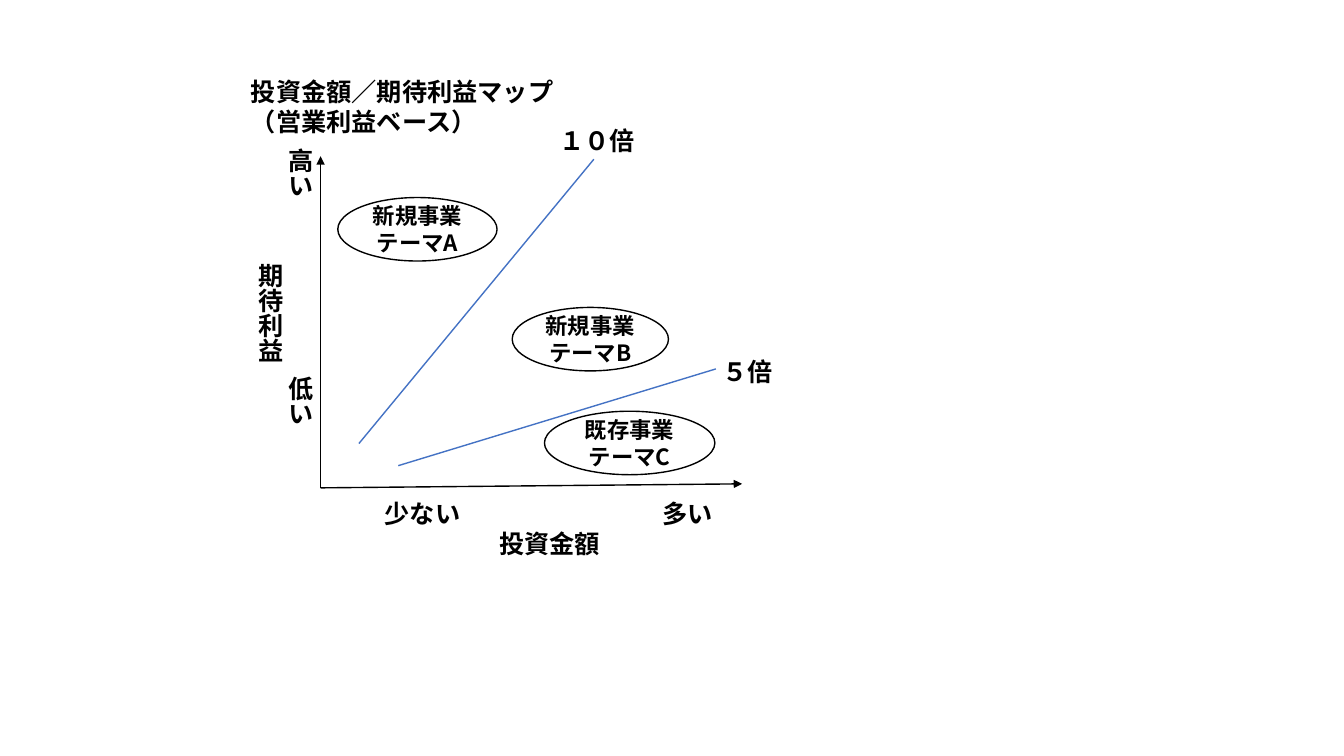
from pptx import Presentation
from pptx import util as u
from pptx.dml.color import RGBColor
from pptx.enum import shapes, text
from pptx.oxml import parse_xml
from pptx.oxml.ns import nsdecls, qn
from lxml import etree

THEME = {
    "font": "Noto Sans CJK JP",
    "ink": RGBColor.from_string("000000"),
    "paper": RGBColor.from_string("FFFFFF"),
    "ratio": RGBColor.from_string("4472C4"),
    "label": u.Pt(18),
    "theme": u.Pt(16),
    "rule": u.Pt(1),
}
CELL = 0.1
LEFT, MID = text.PP_ALIGN.LEFT, text.PP_ALIGN.CENTER
BARE = {"margin_left": 0, "margin_right": 0, "margin_top": 0, "margin_bottom": 0}


def grid(*cells):
    return [u.Inches(cell * CELL) for cell in cells]


def apply(item, values):
    for name, value in values.items():
        setattr(item, name, value)


def write(frame, lines, size, align):
    for index, line in enumerate(lines):
        para = frame.add_paragraph() if index else frame.paragraphs[0]
        para.alignment = align
        run = para.add_run()
        run.text = line
        apply(run.font, {"name": THEME["font"], "size": THEME[size], "bold": True})
        run.font.color.rgb = THEME["ink"]
        etree.SubElement(run.font._element, qn("a:ea")).set("typeface", THEME["font"])


def label(slide, box, *lines, align=LEFT):
    frame = slide.shapes.add_textbox(*grid(*box)).text_frame
    frame.word_wrap = False
    write(frame, lines, "label", align)
    return frame


def mark(slide, x, y, words, upright=False):
    wide, high = (4, 12) if upright else (12, 4)
    frame = label(slide, (x - wide / 2, y - high / 2, wide, high), words, align=MID)
    apply(frame, {**BARE, "vertical_anchor": text.MSO_ANCHOR.MIDDLE})
    if upright:
        frame._txBody.bodyPr.set("vert", "eaVert")


def line(slide, start, end, color, arrow=False):
    link = slide.shapes.add_connector(
        shapes.MSO_CONNECTOR.STRAIGHT, *grid(*start, *end))
    link.line.width = THEME["rule"]
    link.line.color.rgb = THEME[color]
    if arrow:
        link.line._get_or_add_ln().append(
            parse_xml(f'<a:tailEnd {nsdecls("a")} type="triangle"/>'))
    etree.SubElement(link._element.spPr, qn("a:effectLst"))


def oval(slide, x, y, wide, words):
    shape = slide.shapes.add_shape(
        shapes.MSO_SHAPE.OVAL, *grid(x, y, wide, 6.3))
    shape.shadow.inherit = False
    shape.fill.solid()
    shape.fill.fore_color.rgb = THEME["paper"]
    shape.line.color.rgb = THEME["ink"]
    shape.line.width = THEME["rule"]
    frame = shape.text_frame
    apply(frame, {"word_wrap": True, "vertical_anchor": text.MSO_ANCHOR.MIDDLE})
    write(frame, [words], "theme", MID)


def main():
    deck = Presentation()
    apply(deck, {"slide_width": u.Inches(13.33), "slide_height": u.Inches(7.5)})
    slide = deck.slides.add_slide(deck.slide_layouts[6])

    origin = (31.8, 48.4)
    for end in ((73.6, 48), (31.8, 15.5)):
        line(slide, origin, end, "ink", arrow=True)
    for x, y, words in ((41.9, 50.9, "少ない"), (68.2, 50.9, "多い"),
                        (54.5, 53.9, "投資金額")):
        mark(slide, x, y, words)
    for x, y, words in ((29.8, 20.7, "高い"), (29.8, 43.3, "低い"),
                        (26.8, 32.1, "期待利益")):
        mark(slide, x, y, words, upright=True)

    line(slide, (71, 36.6), (39.5, 46.2), "ratio")
    line(slide, (58.9, 15.8), (35.6, 44), "ratio")
    label(slide, (70.7, 34.9, 7.1, 4), "５倍")
    label(slide, (54.5, 11.9, 9.6, 4), "１０倍")
    label(slide, (23.9, 7.1, 32.3, 7.1), "投資金額／期待利益マップ", "（営業利益ベース）")

    for x, y, wide, words in ((33.5, 19.6, 15.8, "新規事業テーマA"),
                              (54, 40.8, 16.9, "既存事業テーマC"),
                              (50.8, 30.5, 15.5, "新規事業テーマB")):
        oval(slide, x, y, wide, words)
    deck.save("out.pptx")


if __name__ == "__main__":
    main()
